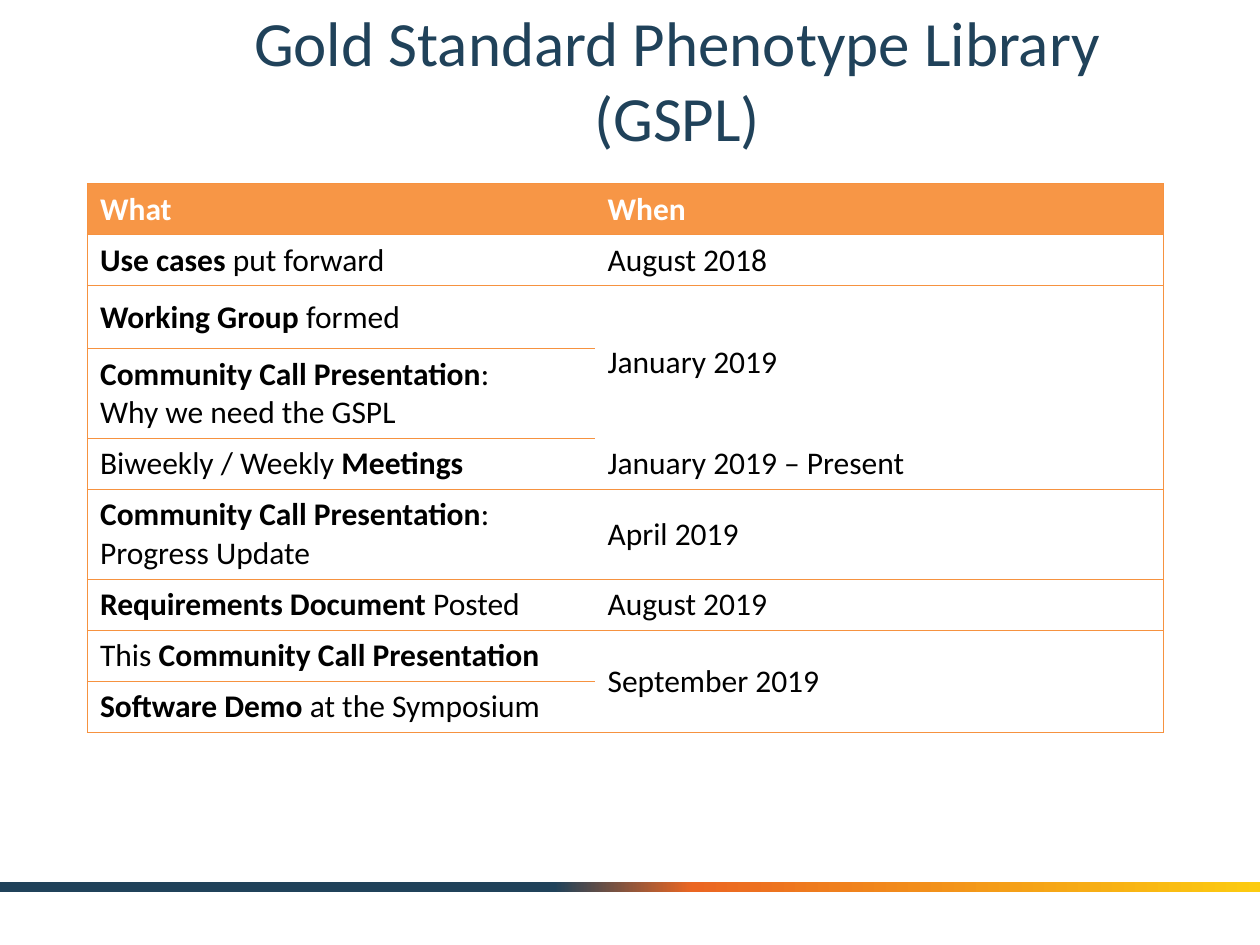
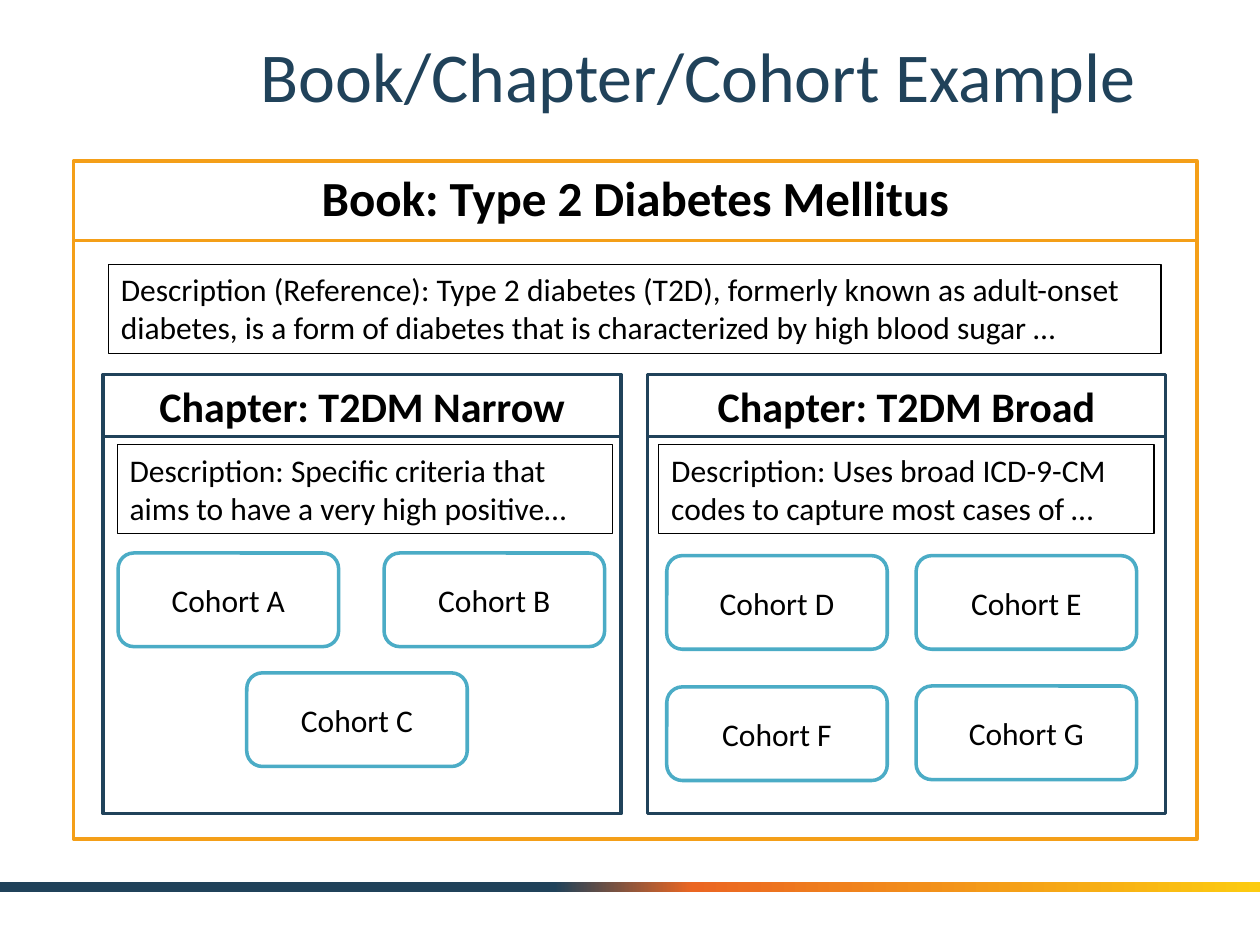
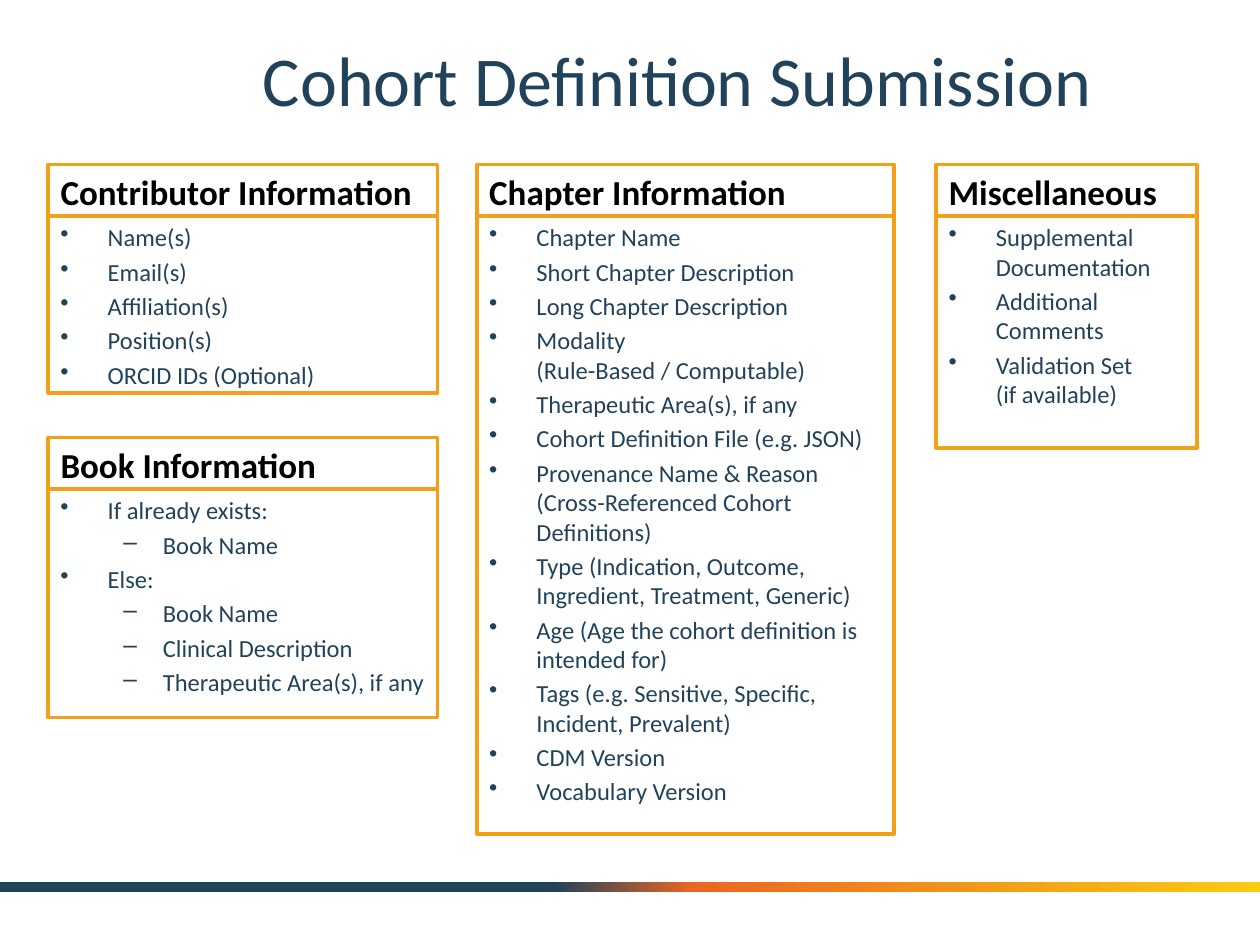
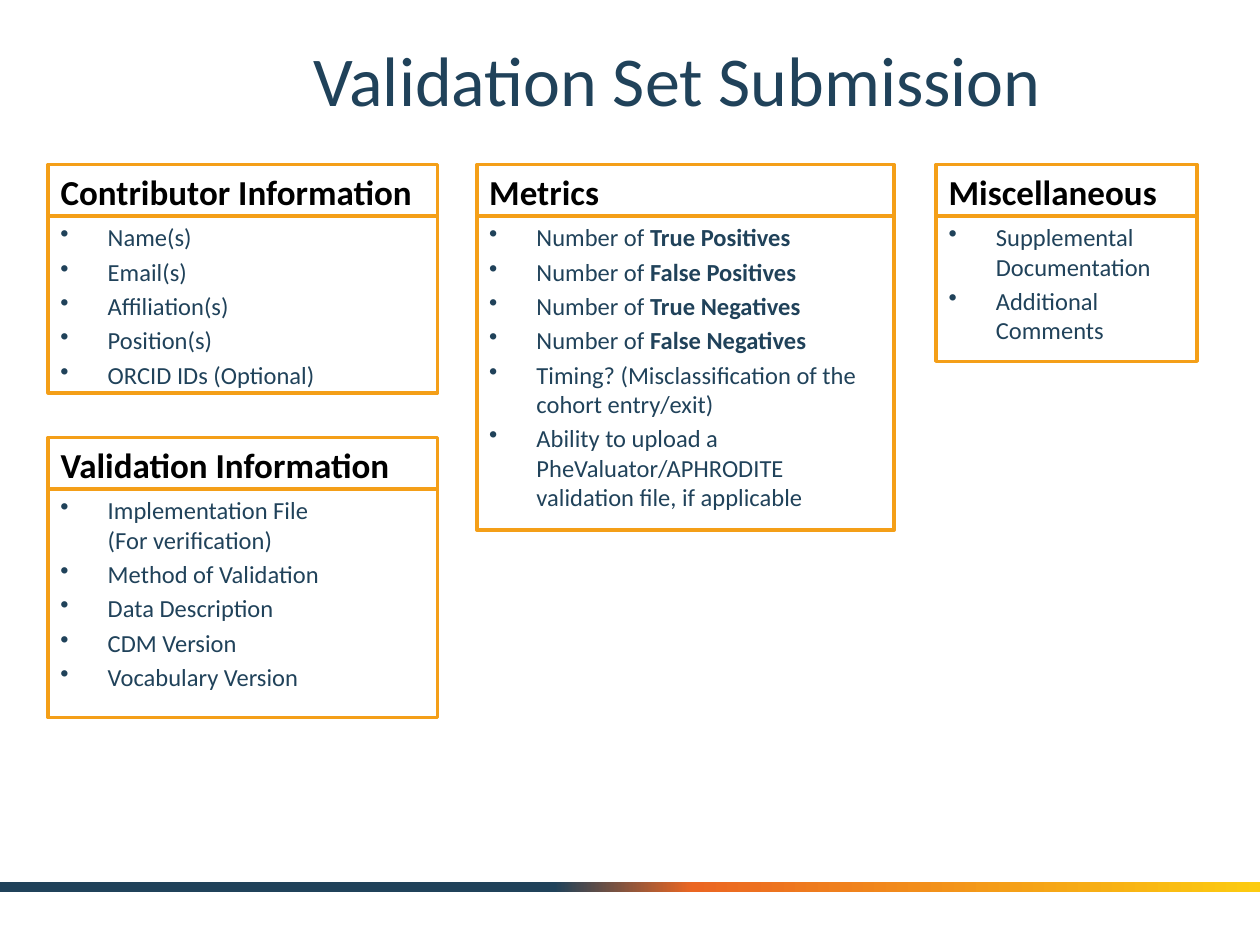
from copy import deepcopy

from lxml.etree import SubElement
from pptx import Presentation
from pptx.dml.color import RGBColor
from pptx.enum.shapes import MSO_SHAPE
from pptx.enum.text import MSO_ANCHOR, PP_ALIGN
from pptx.oxml.ns import qn
from pptx.util import Pt

COLORS = {
    "navy": "20425A",
    "orange": "EB6622",
    "yellow": "FCCB10",
    "amber": "F49F18",
    "teal": "4BACC6",
    "header": "F79646",
    "rule": "F69240",
    "black": "000000",
    "white": "FFFFFF",
}
FONT = "Calibri"
HEADING_HEIGHT = 29.5
BULLETS = {0: ("•", 27, 27), 1: ("–", 58.5, 22.5)}

MILESTONES = [
    ("**What**", "**When**", 29.2, "RTB"),
    ("**Use cases** put forward", "August 2018", 29.2, "RTB"),
    ("**Working Group** formed", "January 2019", 36, "RT"),
    ("**Community Call Presentation**:|Why we need the GSPL", None, 51.2, "R"),
    ("Biweekly / Weekly **Meetings**", "January 2019 – Present", 29.2, "RB"),
    ("**Community Call Presentation**:|Progress Update", "April 2019", 51.2, "RTB"),
    ("**Requirements Document** Posted", "August 2019", 29.2, "RTB"),
    ("This **Community Call Presentation**", "September 2019", 29.2, "RTB"),
    ("**Software Demo** at the Symposium", None, 29.2, "RB"),
]

CHAPTERS = [
    (59, "Chapter: T2DM Narrow", 67,
     "Description: Specific criteria that aims to have a very high positive…",
     [("Cohort A", 67.5, 316), ("Cohort B", 219.5, 316), ("Cohort C", 141, 384.5)]),
    (370, "Chapter: T2DM Broad", 376.5,
     "Description: Uses broad ICD-9-CM codes to capture most cases of …",
     [("Cohort D", 381, 317.5), ("Cohort E", 523.5, 317.5),
      ("Cohort F", 381, 392.5), ("Cohort G", 523.5, 392)]),
]

CONTRIBUTOR = ["Name(s)", "Email(s)", "Affiliation(s)", "Position(s)", "ORCID IDs (Optional)"]
BOOK = ["If already exists:", "- Book Name", "Else:", "- Book Name",
        "- Clinical Description", "- Therapeutic Area(s), if any"]
CHAPTER = [
    "Chapter Name",
    "Short Chapter Description",
    "Long Chapter Description",
    "Modality\n(Rule-Based / Computable)",
    "Therapeutic Area(s), if any",
    "Cohort Definition File (e.g. JSON)",
    "Provenance Name & Reason\n(Cross-Referenced Cohort Definitions)",
    "Type (Indication, Outcome, Ingredient, Treatment, Generic)",
    "Age (Age the cohort definition is intended for)",
    "Tags (e.g. Sensitive, Specific, Incident, Prevalent)",
    "CDM Version",
    "Vocabulary Version",
]
VALIDATION = ["Implementation File\n(For verification)", "Method of Validation",
              "Data Description", "CDM Version", "Vocabulary Version"]
METRICS = [
    "Number of **True Positives**",
    "Number of **False Positives**",
    "Number of **True Negatives**",
    "Number of **False Negatives**",
    "Timing? (Misclassification of the cohort entry/exit)",
    "Ability to upload a PheValuator/APHRODITE validation file, if applicable",
]
MISC = ["Supplemental\nDocumentation", "Additional\nComments"]

LEFT_COLUMN = (27.5, 222.5, 246)
MIDDLE_COLUMN = (272.5, 238.5, 238.5)
RIGHT_COLUMN = (535, 149, 149)
UPPER, LOWER = 94, 250


def rgb(name):
    """Return the palette colour of that name."""
    return RGBColor.from_string(COLORS[name])


def style_font(paragraph, size, color, bold=None):
    """Set the shared font with a size, colour and weight."""
    font = paragraph.font
    font.name, font.size, font.bold = FONT, Pt(size), bold
    font.color.rgb = rgb(color)


def write_rich(paragraph, text):
    """Write text with **bold** parts and line breaks."""
    for part, words in enumerate(text.split("**")):
        for line, piece in enumerate(words.split("\n")):
            if line:
                paragraph.add_line_break()
            if piece:
                run = paragraph.add_run()
                run.text = piece
                if part % 2:
                    run.font.bold = True


def add_text(slide, left, top, width, height):
    """Add a wrapping text box and return its frame."""
    frame = slide.shapes.add_textbox(Pt(left), Pt(top), Pt(width), Pt(height)).text_frame
    frame.word_wrap = True
    return frame


def add_box(slide, left, top, width, height, line, text="", size=18, bold=None,
            align=PP_ALIGN.LEFT, weight=2, kind=MSO_SHAPE.RECTANGLE, anchor=MSO_ANCHOR.TOP):
    """Add a white outlined box with optional text."""
    box = slide.shapes.add_shape(kind, Pt(left), Pt(top), Pt(width), Pt(height))
    box.shadow.inherit = False
    box.fill.solid()
    box.fill.fore_color.rgb = rgb("white")
    box.line.color.rgb = rgb(line)
    box.line.width = Pt(weight)
    if text:
        frame = box.text_frame
        frame.word_wrap = True
        frame.vertical_anchor = anchor
        paragraph = frame.paragraphs[0]
        paragraph.text, paragraph.alignment = text, align
        style_font(paragraph, size, "black", bold)


def add_band(slide):
    """Add the gradient band near the foot of the slide."""
    band = slide.shapes.add_shape(MSO_SHAPE.RECTANGLE, 0, Pt(504), Pt(720), Pt(5.76))
    band.shadow.inherit = False
    band.line.fill.background()
    band.fill.gradient()
    band.fill.gradient_angle = 0
    stops = band._element.spPr.find(qn("a:gradFill")).find(qn("a:gsLst"))
    stops.append(deepcopy(stops[-1]))
    shades = [(0.44, "navy"), (0.55, "orange"), (1, "yellow")]
    for stop, (position, color) in zip(band.fill.gradient_stops, shades):
        stop.position = position
        stop.color.rgb = rgb(color)


def start_slide(deck, title, left=90, top=12, size=40):
    """Add a blank slide with the band and a title."""
    slide = deck.slides.add_slide(deck.slide_layouts[6])
    add_band(slide)
    frame = add_text(slide, left, top, 594, 66)
    frame.vertical_anchor = MSO_ANCHOR.MIDDLE
    heading = frame.paragraphs[0]
    write_rich(heading, title)
    heading.alignment = PP_ALIGN.CENTER
    style_font(heading, size, "navy")
    return slide


def add_bullets(slide, left, top, width, height, items):
    """Add a bullet list; a leading dash marks the second level."""
    frame = add_text(slide, left, top, width, height)
    for index, item in enumerate(items):
        paragraph = frame.add_paragraph() if index else frame.paragraphs[0]
        paragraph.level = int(item.startswith("- "))
        mark, margin, hanging = BULLETS[paragraph.level]
        if index:
            paragraph.space_before = Pt(2.8)
        properties = paragraph._p.get_or_add_pPr()
        properties.set("marL", str(Pt(margin)))
        properties.set("indent", str(-Pt(hanging)))
        SubElement(properties, qn("a:buChar")).set("char", mark)
        write_rich(paragraph, item.removeprefix("- "))
        style_font(paragraph, 14, "navy")


def add_form_section(slide, column, top, height, heading, items):
    """Add a headed panel with its bullet list."""
    left, width, list_width = column
    body_top = top + HEADING_HEIGHT
    add_box(slide, left, top, width, HEADING_HEIGHT, "amber", heading, 20, True)
    add_box(slide, left, body_top, width, height, "amber")
    add_bullets(slide, left, body_top, list_width, height, items)


def add_borders(cell, sides):
    """Draw thin rules on the given sides and none on the others."""
    properties = cell._tc.get_or_add_tcPr()
    for side in "LRTB":
        border = SubElement(properties, qn(f"a:ln{side}"))
        if side in sides:
            border.set("w", str(Pt(0.75)))
            fill = SubElement(border, qn("a:solidFill"))
            SubElement(fill, qn("a:srgbClr")).set("val", COLORS["rule"])
        else:
            SubElement(border, qn("a:noFill"))


def fill_cell(cell, text, sides, is_header):
    """Write and style one table cell."""
    add_borders(cell, sides)
    cell.fill.solid()
    cell.fill.fore_color.rgb = rgb("header" if is_header else "white")
    cell.vertical_anchor = MSO_ANCHOR.MIDDLE
    for index, line in enumerate(text.split("|")):
        frame = cell.text_frame
        paragraph = frame.add_paragraph() if index else frame.paragraphs[0]
        write_rich(paragraph, line)
        style_font(paragraph, 18, "white" if is_header else "black")


def add_timeline(slide):
    """Add the milestone table."""
    total = sum(height for _, _, height, _ in MILESTONES)
    table = slide.shapes.add_table(
        len(MILESTONES), 2, Pt(50), Pt(105), Pt(615), Pt(total)).table
    table.horz_banding = False
    table.columns[0].width, table.columns[1].width = Pt(290), Pt(325)
    for row, (what, when, height, sides) in enumerate(MILESTONES):
        table.rows[row].height = Pt(height)
        fill_cell(table.cell(row, 0), what, "LTB", row == 0)
        fill_cell(table.cell(row, 1), when or "", sides, row == 0)
        if when is None:
            table.cell(row - 1, 1).merge(table.cell(row, 1))


def add_description(slide, left, top, width, text):
    """Add a thinly outlined description."""
    add_box(slide, left, top, width, 51, "black", text, weight=0.75)


def add_chapter(slide, left, heading, description_left, description, cohorts):
    """Add a chapter panel with its description and cohorts."""
    add_box(slide, left, 214, 296, 36, "navy", heading, 24, True, PP_ALIGN.CENTER)
    add_box(slide, left, 249.5, 296, 215.5, "navy")
    add_description(slide, description_left, 254, 283, description)
    for cohort, cohort_left, cohort_top in cohorts:
        add_box(slide, cohort_left, cohort_top, 126, 53.5, "teal", cohort,
                align=PP_ALIGN.CENTER, kind=MSO_SHAPE.ROUNDED_RECTANGLE,
                anchor=MSO_ANCHOR.MIDDLE)


def add_book(slide):
    """Add the book panel with its chapters."""
    add_box(slide, 42, 92, 642, 47, "amber", "Book: Type 2 Diabetes Mellitus",
            28, True, PP_ALIGN.CENTER)
    add_box(slide, 42, 137.5, 642, 342, "amber")
    add_description(
        slide, 62, 151, 601.5,
        "Description (Reference): Type 2 diabetes (T2D), formerly known as adult-onset "
        "diabetes, is a form of diabetes that is characterized by high blood sugar …")
    for chapter in CHAPTERS:
        add_chapter(slide, *chapter)


def add_submission(deck, title, sections):
    """Add a submission slide; both forms start with the contributor."""
    slide = start_slide(deck, title)
    add_form_section(slide, LEFT_COLUMN, UPPER, 101, "Contributor Information", CONTRIBUTOR)
    for section in sections:
        add_form_section(slide, *section)


def main():
    """Build and save the deck."""
    deck = Presentation()
    deck.slide_width, deck.slide_height = Pt(720), Pt(540)
    add_timeline(start_slide(deck, "Gold Standard Phenotype Library\n(GSPL)", size=36))
    add_book(start_slide(deck, "Book/Chapter/Cohort Example", left=102, top=9.5))
    add_submission(deck, "Cohort Definition Submission", [
        (LEFT_COLUMN, LOWER, 130.5, "Book Information", BOOK),
        (MIDDLE_COLUMN, UPPER, 353, "Chapter Information", CHAPTER),
        (RIGHT_COLUMN, UPPER, 132.5, "Miscellaneous",
         MISC + ["Validation Set\n(if available)"]),
    ])
    add_submission(deck, "Validation Set Submission", [
        (LEFT_COLUMN, LOWER, 130.5, "Validation Information", VALIDATION),
        (MIDDLE_COLUMN, UPPER, 179.5, "Metrics", METRICS),
        (RIGHT_COLUMN, UPPER, 83, "Miscellaneous", MISC),
    ])
    deck.save("out.pptx")


if __name__ == "__main__":
    main()
